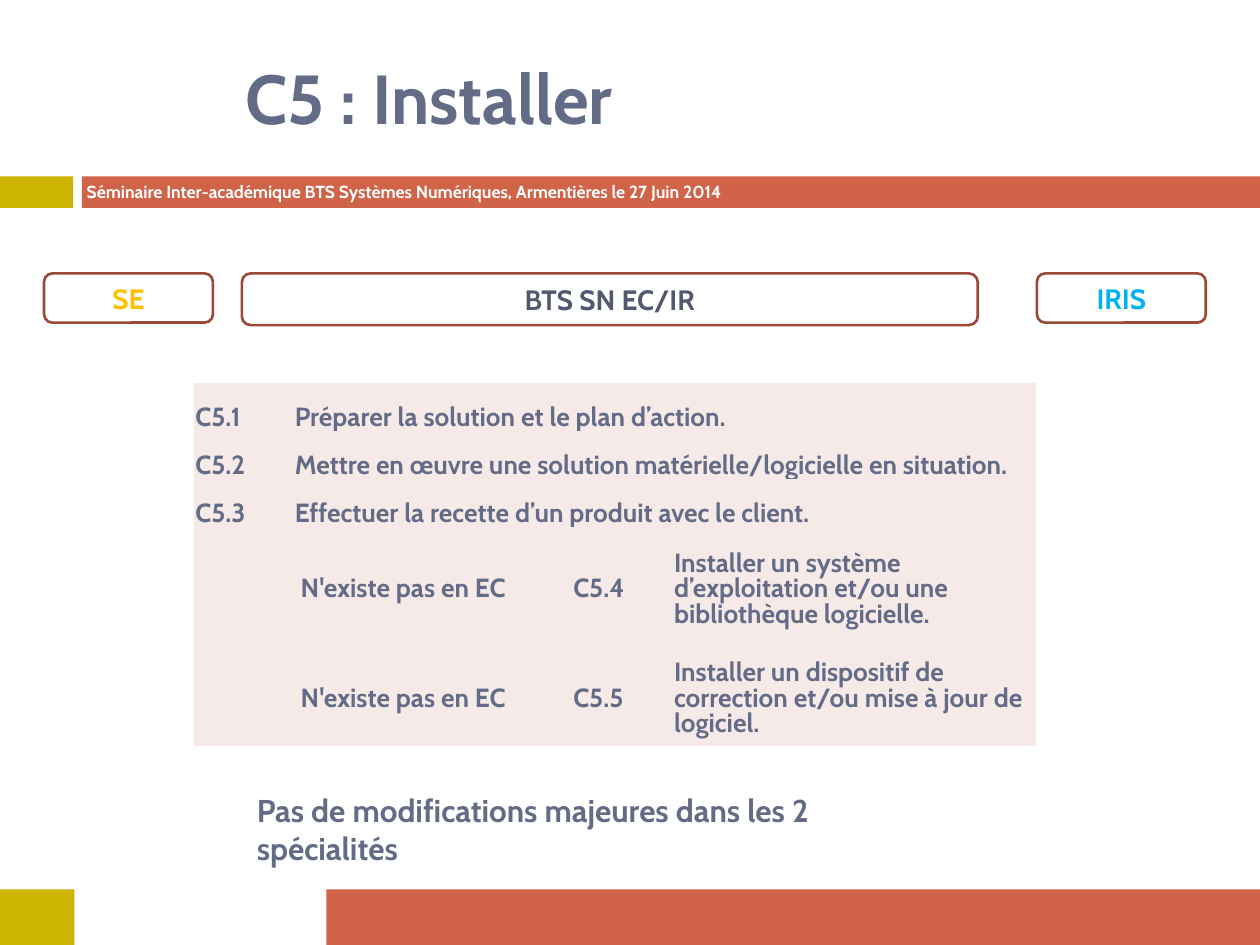
from dataclasses import dataclass

import pptx
import pptx.dml.color
import pptx.enum.shapes
import pptx.enum.text
import pptx.util

Inches = pptx.util.Inches
Shapes = pptx.enum.shapes.MSO_SHAPE
Align = pptx.enum.text.PP_ALIGN
Anchor = pptx.enum.text.MSO_ANCHOR
AutoSize = pptx.enum.text.MSO_AUTO_SIZE


@dataclass(frozen=True)
class Theme:
    font: str = "Cabin"
    olive: str = "CCB400"
    rust: str = "D16349"
    outline: str = "9A4936"
    white: str = "FFFFFF"
    slate: str = "646B86"
    dark_slate: str = "52586E"
    amber: str = "FFC000"
    sky: str = "00B0F0"
    cell: str = "F6EAE8"
    title_size: float = 39.6
    note_size: float = 18
    label_size: float = 16
    table_size: float = 15
    banner_size: float = 10
    plain_table_style: str = "{2D5ABB26-0587-4C30-8999-92F81FD0307C}"


class SlideBuilder:
    def __init__(self, presentation, theme):
        self.theme = theme
        self.slide = presentation.slides.add_slide(presentation.slide_layouts[5])

    def paint(self, fill, color):
        fill.solid()
        fill.fore_color.rgb = pptx.dml.color.RGBColor.from_string(color)

    def set_text(self, text_frame, text, size, color, alignment=Align.LEFT):
        text_frame.text = text
        paragraph = text_frame.paragraphs[0]
        paragraph.alignment = alignment
        for run in paragraph.runs:
            run.font.name = self.theme.font
            run.font.size = pptx.util.Pt(size)
            run.font.bold = True
            run.font.color.rgb = pptx.dml.color.RGBColor.from_string(color)

    def title(self, text, left, top, width, height):
        shape = self.slide.shapes.title
        shape.left, shape.top = Inches(left), Inches(top)
        shape.width, shape.height = Inches(width), Inches(height)
        shape.text_frame.auto_size = AutoSize.NONE
        shape.text_frame.vertical_anchor = Anchor.MIDDLE
        self.set_text(shape.text_frame, text, self.theme.title_size, self.theme.slate)

    def box(self, kind, left, top, width, height, fill):
        shape = self.slide.shapes.add_shape(
            kind, Inches(left), Inches(top), Inches(width), Inches(height)
        )
        shape.shadow.inherit = False
        self.paint(shape.fill, fill)
        shape.line.fill.background()
        return shape

    def band(self, left, top, width, height, fill):
        self.box(Shapes.RECTANGLE, left, top, width, height, fill)

    def label(self, text, left, top, width, height, color):
        shape = self.box(
            Shapes.ROUNDED_RECTANGLE, left, top, width, height, self.theme.white
        )
        self.paint(shape.line.fill, self.theme.outline)
        shape.line.width = pptx.util.Pt(1.5)
        shape.text_frame.vertical_anchor = Anchor.MIDDLE
        self.set_text(
            shape.text_frame, text, self.theme.label_size, color, Align.CENTER
        )

    def text(self, text, left, top, width, height, size, color):
        shape = self.slide.shapes.add_textbox(
            Inches(left), Inches(top), Inches(width), Inches(height)
        )
        shape.text_frame.word_wrap = True
        self.set_text(shape.text_frame, text, size, color)

    def table(self, rows, left, top, widths, heights):
        table = self.slide.shapes.add_table(
            len(heights), len(widths), Inches(left), Inches(top),
            Inches(sum(widths)), Inches(sum(heights)),
        ).table
        table.first_row = table.horz_banding = False
        table._tbl.tblPr[0].text = self.theme.plain_table_style
        for column, width in zip(table.columns, widths):
            column.width = Inches(width)
        for row, height in zip(table.rows, heights):
            row.height = Inches(height)
        for row_index, texts in enumerate(rows):
            merged = len(texts) < len(widths)
            for column_index in range(len(widths)):
                self.paint(table.cell(row_index, column_index).fill, self.theme.cell)
            if merged:
                table.cell(row_index, 1).merge(table.cell(row_index, len(widths) - 1))
            for column_index, text in enumerate(texts):
                if text:
                    justified = column_index == 0 or (column_index == 1 and not merged)
                    self.cell(table.cell(row_index, column_index), text, justified)

    def cell(self, cell, text, justified):
        cell.margin_left = cell.margin_right = Inches(0.01)
        cell.margin_top, cell.margin_bottom = Inches(0.18), Inches(0)
        cell.vertical_anchor = Anchor.MIDDLE
        alignment = Align.JUSTIFY if justified else Align.LEFT
        self.set_text(
            cell.text_frame, text, self.theme.table_size, self.theme.slate, alignment
        )
        cell.text_frame.paragraphs[0].line_spacing = 0.8


def main():
    presentation = pptx.Presentation()
    presentation.slide_width, presentation.slide_height = Inches(10), Inches(7.5)
    theme = Theme()
    builder = SlideBuilder(presentation, theme)

    builder.band(0, 1.4, 0.58, 0.25, theme.olive)
    builder.band(0.65, 1.4, 9.35, 0.25, theme.rust)
    builder.band(0, 7.06, 0.59, 0.44, theme.olive)
    builder.band(2.59, 7.06, 7.41, 0.44, theme.rust)
    builder.text(
        "Séminaire Inter-académique BTS Systèmes Numériques, Armentières le 27 Juin 2014",
        0.59, 1.39, 6.06, 0.44, theme.banner_size, theme.white,
    )
    builder.title("C5 : Installer", 1.85, 0.23, 8.15, 1.08)

    builder.label("SE", 0.35, 2.17, 1.34, 0.39, theme.amber)
    builder.label("IRIS", 8.23, 2.17, 1.34, 0.39, theme.sky)
    builder.label("BTS SN EC/IR", 1.92, 2.17, 5.84, 0.41, theme.dark_slate)

    absent = " N'existe pas en EC"
    skills = [
        ["C5.1", "Préparer la solution et le plan d’action."],
        ["C5.2", "Mettre en œuvre une solution matérielle/logicielle en situation."],
        ["C5.3", "Effectuer la recette d’un produit avec le client."],
        ["", absent, "C5.4",
         "Installer un système d’exploitation et/ou une bibliothèque logicielle."],
        ["", absent, "C5.5",
         "Installer un dispositif de correction et/ou mise à jour de logiciel."],
    ]
    builder.table(
        skills, 1.54, 3.04, [0.79, 2.21, 0.8, 2.88], [0.38, 0.38, 0.38, 0.82, 0.92]
    )
    builder.text(
        "Pas de modifications majeures dans les 2 spécialités",
        1.94, 6.23, 5.6, 0.4, theme.note_size, theme.slate,
    )
    presentation.save("out.pptx")


if __name__ == "__main__":
    main()
